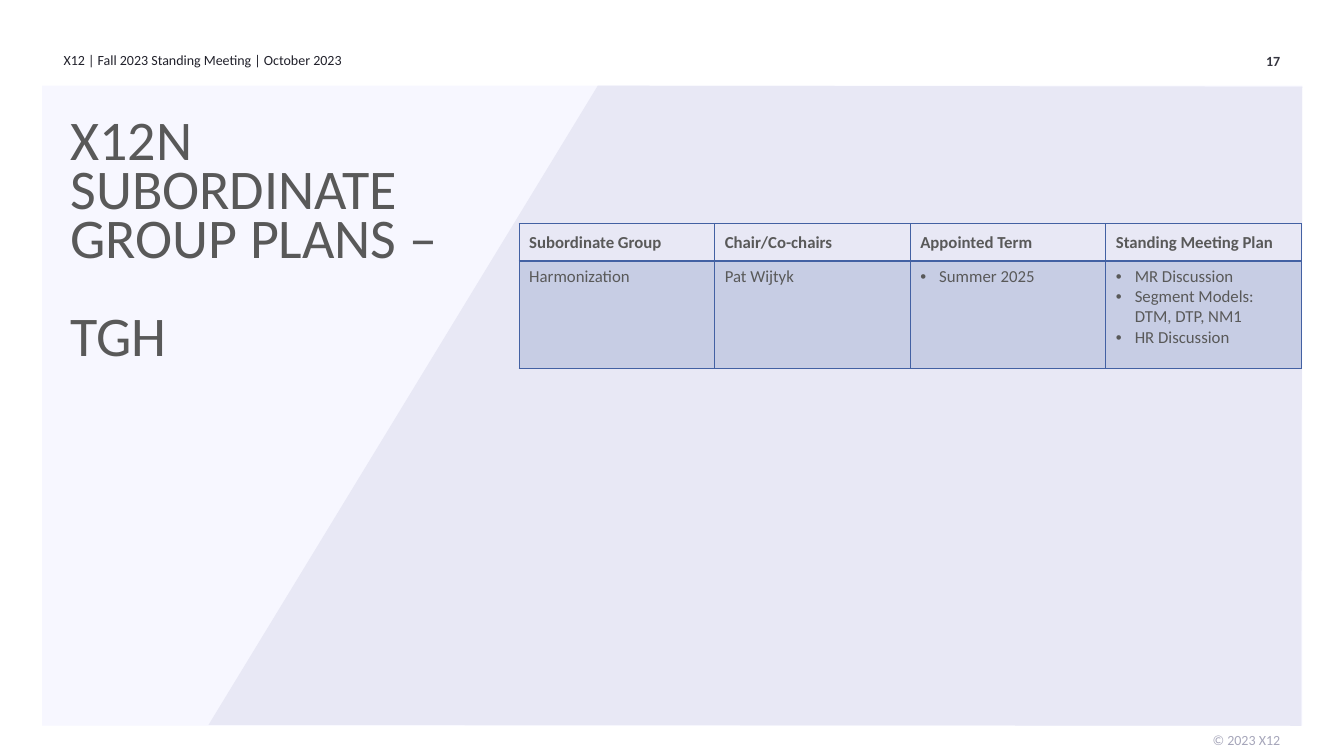
"""Build the X12N subordinate group plans slide with its meeting table."""
from dataclasses import dataclass

from lxml.etree import SubElement
from pptx import Presentation
from pptx.dml.color import RGBColor
from pptx.enum.text import MSO_ANCHOR, MSO_AUTO_SIZE, PP_ALIGN
from pptx.oxml import parse_xml
from pptx.oxml.ns import nsdecls, qn
from pptx.util import Pt


@dataclass(frozen=True)
class Theme:
    font: str = "Calibri"
    panel: str = "F7F7FF"
    slope: str = "E8E8F5"
    text: str = "595959"
    header: str = "21212B"
    number: str = "363640"
    copyright: str = "A6A6BA"
    table: str = "4361A3"
    title_size: int = 40
    table_size: int = 12
    small_size: int = 10


theme = Theme()


def format_text(frame, size, color, bold=False, align=PP_ALIGN.LEFT):
    for para in frame.paragraphs:
        para.alignment = align
        for span in para.runs:
            span.font.name = theme.font
            span.font.size = Pt(size)
            span.font.bold = bold
            span.font.color.rgb = RGBColor.from_string(color)


def clear_margins(frame):
    frame.margin_left = frame.margin_right = frame.margin_top = frame.margin_bottom = 0
    frame.word_wrap = True
    frame.auto_size = MSO_AUTO_SIZE.NONE
    frame.vertical_anchor = MSO_ANCHOR.TOP


deck = Presentation()
deck.slide_width, deck.slide_height = Pt(960), Pt(540)
page = deck.slides.add_slide(deck.slide_layouts[5])

panel = page.shapes.add_shape(1, Pt(30.2), Pt(61.2), Pt(900), Pt(457.2))
outline = page.shapes.build_freeform(Pt(149), Pt(517.7))
outline.add_line_segments(
    [(Pt(427), Pt(61.2)), (Pt(930.2), Pt(61.9)), (Pt(929.5), Pt(518.4))], close=True
)
slope = outline.convert_to_shape()
for shape, color in ((panel, theme.panel), (slope, theme.slope)):
    shape.shadow.inherit = False
    shape.fill.solid()
    shape.fill.fore_color.rgb = RGBColor.from_string(color)
    shape.line.fill.background()

small_texts = [
    ("X12 | Fall 2023 Standing Meeting | October 2023",
     45.4, 36.7, 324, theme.header, False, PP_ALIGN.LEFT),
    ("17", 805.7, 37.4, 108.7, theme.number, True, PP_ALIGN.RIGHT),
    ("© 2023 X12", 805.7, 522.7, 108.7, theme.copyright, False, PP_ALIGN.RIGHT),
]
for text, left, top, width, color, bold, align in small_texts:
    box = page.shapes.add_textbox(Pt(left), Pt(top), Pt(width), Pt(17))
    clear_margins(box.text_frame)
    box.text_frame.text = text
    format_text(box.text_frame, theme.small_size, color, bold, align)

title = page.shapes.title
title.left, title.top, title.width, title.height = Pt(50.4), Pt(87.8), Pt(265.7), Pt(136.8)
clear_margins(title.text_frame)
title.text_frame.text = "X12N SUBORDINATE GROUP PLANS –\nTGH"
format_text(title.text_frame, theme.title_size, theme.text)
for para in title.text_frame.paragraphs:
    para.line_spacing = Pt(35)
    para.space_before = Pt(0)
title.text_frame.paragraphs[-1].space_before = Pt(35)
title.element.getparent().append(title.element)

rows = [
    ["Subordinate Group", "Chair/Co-chairs", "Appointed Term", "Standing Meeting Plan"],
    ["Harmonization", "Pat Wijtyk", "Summer 2025",
     "MR Discussion\nSegment Models: DTM, DTP, NM1\nHR Discussion"],
]
bulleted_columns = (2, 3)
table = page.shapes.add_table(2, 4, Pt(370.8), Pt(159.8), Pt(558.8), Pt(103.7)).table
table.first_row = table.horz_banding = False
table.rows[0].height, table.rows[1].height = Pt(26.7), Pt(77)

for row, texts in enumerate(rows):
    is_header = row == 0
    for column, text in enumerate(texts):
        cell = table.cell(row, column)
        cell.text_frame.text = text
        cell.vertical_anchor = MSO_ANCHOR.MIDDLE if is_header else MSO_ANCHOR.TOP
        if not is_header and column in bulleted_columns:
            for para in cell.text_frame.paragraphs:
                properties = para._p.get_or_add_pPr()
                properties.set("marL", str(Pt(13.5)))
                properties.set("indent", str(-Pt(13.5)))
                SubElement(properties, qn("a:buFont"), typeface="Arial")
                SubElement(properties, qn("a:buChar"), char="•")
        format_text(cell.text_frame, theme.table_size, theme.text, is_header)

        cell_properties = cell._tc.get_or_add_tcPr()
        divider = "B" if is_header else "T"
        for side in "LRTB":
            width = Pt(2 if side == divider else 1)
            cell_properties.append(parse_xml(
                f'<a:ln{side} {nsdecls("a")} w="{width}"><a:solidFill>'
                f'<a:srgbClr val="{theme.table}"/></a:solidFill></a:ln{side}>'
            ))
        if is_header:
            cell.fill.background()
        else:
            cell.fill.solid()
            cell.fill.fore_color.rgb = RGBColor.from_string(theme.table)
            fill_color = cell_properties.find(qn("a:solidFill")).find(qn("a:srgbClr"))
            SubElement(fill_color, qn("a:alpha"), val="20000")

deck.save("out.pptx")
